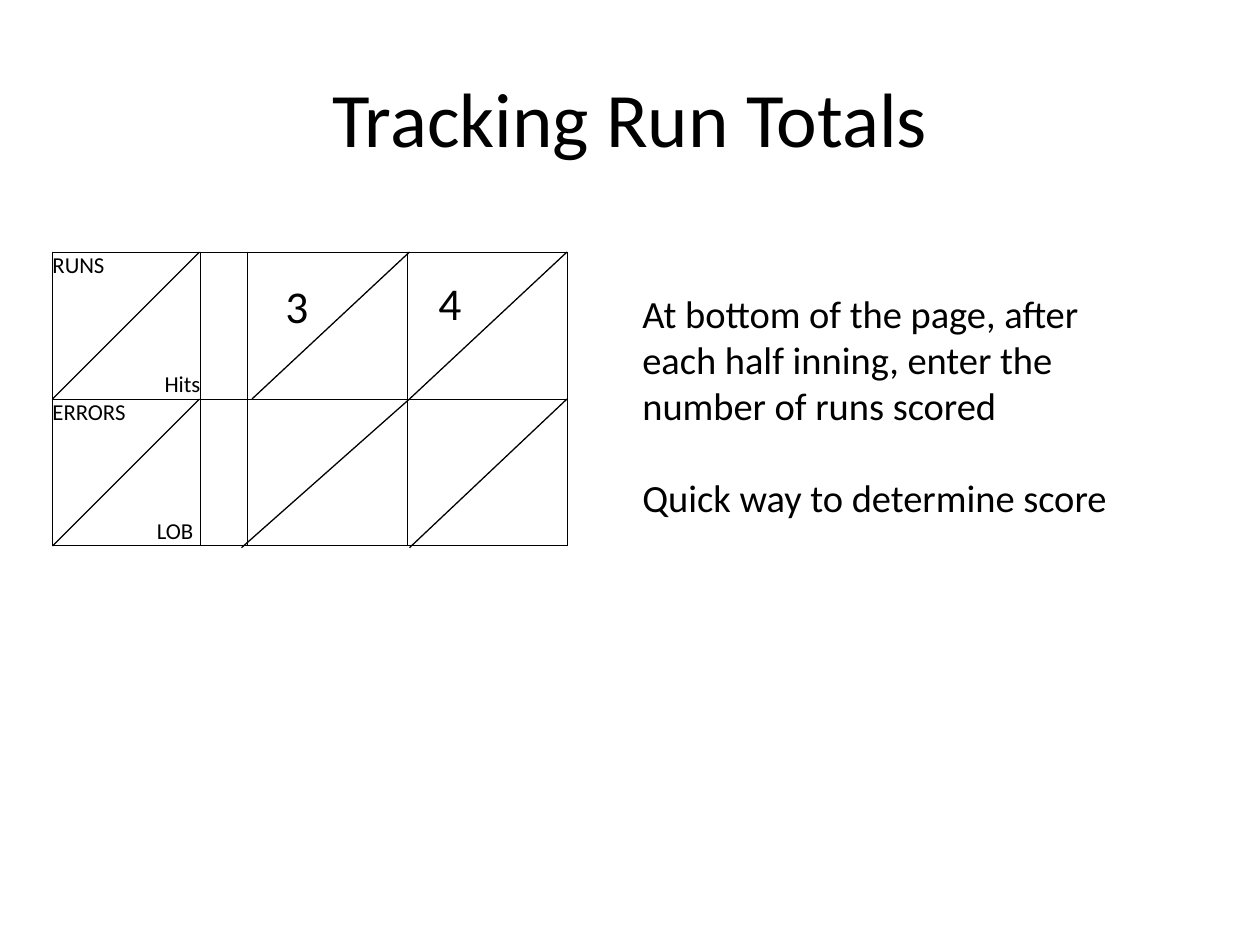
from lxml import etree
from pptx import Presentation
from pptx.dml.color import RGBColor
from pptx.enum.shapes import MSO_CONNECTOR
from pptx.enum.text import MSO_ANCHOR, PP_ALIGN
from pptx.oxml.ns import qn
from pptx.util import Pt

STRAIGHT = MSO_CONNECTOR.STRAIGHT
LEFT, CENTER, RIGHT = PP_ALIGN.LEFT, PP_ALIGN.CENTER, PP_ALIGN.RIGHT
TOP, MIDDLE, BOTTOM = MSO_ANCHOR.TOP, MSO_ANCHOR.MIDDLE, MSO_ANCHOR.BOTTOM
COLORS = {"ink": "000000"}
FONT = "Calibri"
TITLE_ONLY = 5


def write(paragraph, text, size=22, align=LEFT, before=0):
    paragraph.alignment = align
    if before:
        paragraph.space_before = Pt(before)
    run = paragraph.add_run()
    run.text = text
    run.font.size = Pt(size)
    run.font.name = FONT
    run.font.color.rgb = RGBColor.from_string(COLORS["ink"])


class SlideBuilder:
    def __init__(self, prs):
        self.slide = prs.slides.add_slide(prs.slide_layouts[TITLE_ONLY])
        self.ink = RGBColor.from_string(COLORS["ink"])

    def title(self, text, left, top, width, height):
        title = self.slide.shapes.title
        title.left, title.top = Pt(left), Pt(top)
        title.width, title.height = Pt(width), Pt(height)
        title.text_frame.vertical_anchor = MIDDLE
        write(title.text_frame.paragraphs[0], text, size=44, align=CENTER)

    def text(self, lines, left, top, width, height, size, gap=0):
        box = self.slide.shapes.add_textbox(Pt(left), Pt(top), Pt(width), Pt(height))
        frame = box.text_frame
        frame.word_wrap = True
        for i, line in enumerate(lines):
            paragraph = frame.add_paragraph() if i else frame.paragraphs[0]
            write(paragraph, line, size=size, before=gap if i else 0)

    def line(self, start, end):
        line = self.slide.shapes.add_connector(STRAIGHT, *map(Pt, start + end))
        line.line.color.rgb = self.ink
        line.line.width = Pt(0.75)
        etree.SubElement(line._element.spPr, qn("a:effectLst"))

    def border(self, cell, side, visible):
        edge = etree.SubElement(cell._tc.get_or_add_tcPr(), qn(f"a:ln{side}"), w=str(Pt(0.5)))
        if visible:
            fill = etree.SubElement(edge, qn("a:solidFill"))
            etree.SubElement(fill, qn("a:srgbClr"), val=COLORS["ink"])
        else:
            etree.SubElement(edge, qn("a:noFill"))

    def table(self, left, top, widths, heights, column_rules, row_rules):
        table = self.slide.shapes.add_table(
            len(heights), len(widths), Pt(left), Pt(top),
            Pt(sum(widths)), Pt(sum(heights))).table
        table.first_row = table.horz_banding = False
        for column, width in zip(table.columns, widths):
            column.width = Pt(width)
        for r, height in enumerate(heights):
            table.rows[r].height = Pt(height)
            for c in range(len(widths)):
                cell = table.cell(r, c)
                self.border(cell, "L", c in column_rules)
                self.border(cell, "R", c + 1 in column_rules)
                self.border(cell, "T", r in row_rules)
                self.border(cell, "B", r + 1 in row_rules)
                cell.fill.background()
        return table

    def label(self, cell, text, align=LEFT, anchor=TOP, inset=0):
        cell.margin_left = cell.margin_top = cell.margin_bottom = 0
        cell.margin_right = Pt(inset)
        cell.vertical_anchor = anchor
        write(cell.text_frame.paragraphs[0], text, size=13, align=align)


def main():
    prs = Presentation()
    prs.slide_width, prs.slide_height = Pt(720), Pt(540)
    page = SlideBuilder(prs)
    page.title("Tracking Run Totals", 36, 21.6, 648, 90)

    # Score grid: two table rows make one inning box
    score = page.table(30, 144, [42.25, 42.25, 27, 91.5, 91.5], [42] * 4,
                       column_rules={0, 2, 3, 4, 5}, row_rules={0, 2, 4})
    page.label(score.cell(0, 0), "RUNS")
    page.label(score.cell(1, 1), "Hits", align=RIGHT, anchor=BOTTOM)
    page.label(score.cell(2, 0), "ERRORS")
    page.label(score.cell(3, 1), "LOB", align=RIGHT, anchor=BOTTOM, inset=4)

    # Diagonals that split each box
    upper, middle, lower = 144, 228, 312
    for start, end in [
        ((138, lower + 1), (234, middle)),
        ((144, middle), (234, upper)),
        ((234, middle), (324, upper)),
        ((30, lower), (114, middle)),
        ((234, lower + 1), (324, middle)),
        ((30, middle), (114, upper)),
    ]:
        page.line(start, end)

    # Explanation
    page.text(["At bottom of the page, after each half inning, enter the "
               "number of runs scored", "Quick way to determine score"],
              360, 162, 282, 140.4, size=22, gap=26.4)

    # Runs scored
    for runs, left, top in [("3", 156, 155.5), ("4", 243.4, 153.4)]:
        page.text([runs], left, top, 42, 38.9, size=26)

    prs.save("out.pptx")


if __name__ == "__main__":
    main()
